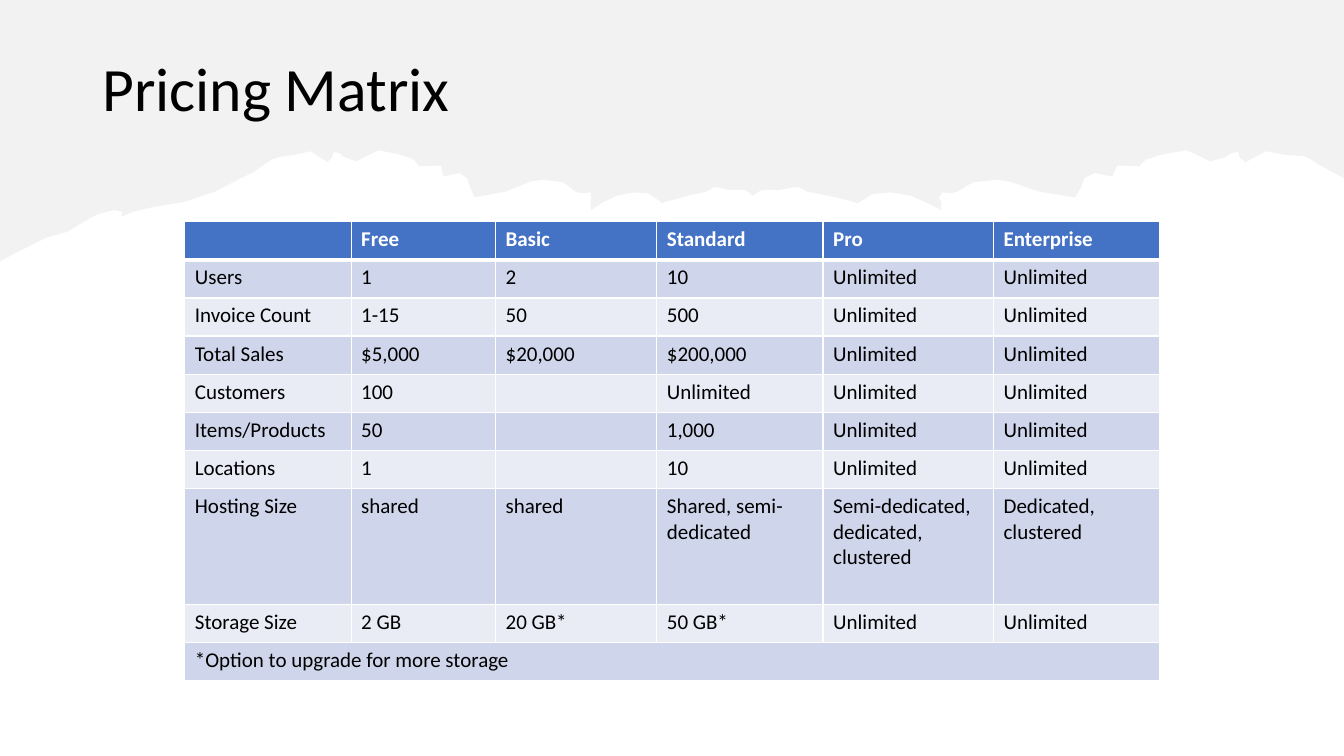
from lxml import etree
from pptx import Presentation
from pptx.dml.color import RGBColor
from pptx.enum.text import MSO_ANCHOR
from pptx.oxml.ns import qn
from pptx.util import Inches, Pt

MIDDLE = MSO_ANCHOR.MIDDLE
COLORS = {
    "black": "000000",
    "white": "FFFFFF",
    "header": "4472C4",
    "band": "CFD5EA",
    "light": "E9EBF5",
    "torn": "E7E6E6",
}
GRID_COLS, GRID_ROWS = 160, 90

# Torn lower edge of the backdrop, left to right, in grid units
TORN_EDGE = [
    (0, 31.1), (2.3, 29.9), (5.5, 28.3), (8, 27.6), (9.8, 26.5), (11.6, 25.5),
    (13.6, 25), (14.6, 25.2), (14.4, 25.8), (16.2, 25.1), (18, 24.7), (22, 24),
    (25.6, 22.8), (28.7, 21.2), (30.2, 20.5), (31.3, 19.7), (32.3, 19),
    (33.7, 18.6), (35.2, 18.4), (37, 18), (39, 19.3), (39.5, 18.8),
    (39.7, 18.1), (40.4, 18.2), (41, 18.7), (42.4, 19.2), (44.4, 18.2),
    (45.1, 17.9), (46.7, 18.2), (47.9, 18.5), (49.3, 19), (49.9, 19.8),
    (52.5, 19.7), (52.8, 21), (54.7, 20.6), (55.6, 21.2), (56, 22.3),
    (56.5, 23.5), (60.2, 22.8), (63.2, 21.6), (64.6, 21.4), (67.1, 21.7),
    (68.5, 22.8), (69.2, 23), (70.3, 22.9), (70.4, 23.5), (70.3, 24.3),
    (70.4, 25), (71.6, 24.2), (73.4, 23.3), (75.5, 22.9), (77.2, 23),
    (78.5, 23.9), (78.8, 24.2), (79.7, 23.9), (82.3, 23.2), (84.1, 22.8),
    (85, 22.3), (85.6, 22.3), (86.7, 22.6), (88.3, 22.6), (88.9, 22.7),
    (89.6, 23.3), (90.5, 22.7), (91.2, 22.6), (92.9, 22.6), (94.4, 22.3),
    (95.2, 22.3), (96.1, 22.8), (98.2, 23.2), (101.2, 23.9), (102.1, 24.2),
    (102.6, 23.9), (103.8, 23.1), (106.1, 22.9), (108.4, 23.3), (110.5, 24.2),
    (112, 25), (112.1, 24.2), (111.8, 23.5), (112.2, 22.9), (113.3, 23),
    (114, 22.8), (115.8, 21.7), (118.7, 21.4), (120.2, 21.6), (123.7, 22.8),
    (128, 23.5), (128.7, 22.3), (129.1, 21.2), (130.3, 20.6), (132.4, 21),
    (133, 19.7), (135.6, 19.8), (136.4, 19), (138, 18.5), (139.4, 18.2),
    (141.2, 17.9), (142, 18.2), (144.1, 19.2), (145.9, 18.7), (146.6, 18.2),
    (147.4, 18.1), (147.6, 18.8), (148.3, 19.3), (150.7, 18), (152.8, 18.4),
    (155.3, 18.6), (156.1, 19), (157.2, 19.7), (159.4, 20.9), (160, 21.2),
]

U = "Unlimited"
PRICING = [
    ["", "Free", "Basic", "Standard", "Pro", "Enterprise"],
    ["Users", "1", "2", "10", U, U],
    ["Invoice Count", "1-15", "50", "500", U, U],
    ["Total Sales", "$5,000", "$20,000", "$200,000", U, U],
    ["Customers", "100", "", U, U, U],
    ["Items/Products", "50", "", "1,000", U, U],
    ["Locations", "1", "", "10", U, U],
    ["Hosting Size", "shared", "shared", "Shared, semi-dedicated",
     "Semi-dedicated, dedicated, clustered", "Dedicated, clustered"],
    ["Storage Size", "2 GB", "20 GB*", "50 GB*", U, U],
    ["*Option to upgrade for more storage", "", "", "", "", ""],
]
COL_WIDTHS = [19.8, 17.2, 19.2, 19.8, 20.3, 19.8]
ROW_HEIGHTS = [4.54] * 7 + [13.8] + [4.54] * 2


def rgb(name):
    return RGBColor.from_string(COLORS[name])


class SlideBuilder:
    font = "Calibri"
    cell_size = 15

    def __init__(self, prs):
        self.slide = prs.slides.add_slide(prs.slide_layouts[6])
        self.col = prs.slide_width / GRID_COLS
        self.row = prs.slide_height / GRID_ROWS

    def x(self, cols):
        return round(cols * self.col)

    def y(self, rows):
        return round(rows * self.row)

    def box(self, left, top, width, height):
        return self.x(left), self.y(top), self.x(width), self.y(height)

    def style(self, p, size, color, bold=False):
        p.font.name, p.font.size, p.font.bold = self.font, Pt(size), bold
        p.font.color.rgb = rgb(color)

    def outline(self, points, color, opacity):
        (x0, y0), *rest = [(self.x(x), self.y(y)) for x, y in points]
        builder = self.slide.shapes.build_freeform(x0, y0)
        builder.add_line_segments(rest, close=True)
        sp = builder.convert_to_shape()
        sp.shadow.inherit = False
        sp.line.fill.background()
        sp.fill.solid()
        sp.fill.fore_color.rgb = rgb(color)
        clr = sp.element.spPr.find(qn("a:solidFill"))[0]
        etree.SubElement(clr, qn("a:alpha"), val=str(opacity * 1000))

    def title(self, text, *place):
        tf = self.slide.shapes.add_textbox(*self.box(*place)).text_frame
        tf.word_wrap = True
        tf.vertical_anchor = MIDDLE
        p = tf.paragraphs[0]
        p.text = text
        p.line_spacing = 0.9
        self.style(p, 44, "black")

    def borders(self, cell, bottom):
        tc_pr = cell._tc.get_or_add_tcPr()
        for side, width in (("L", 1), ("R", 1), ("T", 1), ("B", bottom)):
            ln = etree.SubElement(tc_pr, qn(f"a:ln{side}"), w=str(Pt(width)))
            fill = etree.SubElement(ln, qn("a:solidFill"))
            etree.SubElement(fill, qn("a:srgbClr"), val=COLORS["white"])

    def cell(self, cell, text, row):
        header = row == 0
        self.borders(cell, 3 if header else 1)
        cell.fill.solid()
        band = "band" if row % 2 else "light"
        cell.fill.fore_color.rgb = rgb("header" if header else band)
        p = cell.text_frame.paragraphs[0]
        p.text = text
        self.style(p, self.cell_size, "white" if header else "black", header)
        if not text:
            # An empty cell takes its line height from the end mark
            etree.SubElement(p._p, qn("a:endParaRPr"), sz=str(self.cell_size * 100))

    def table(self, rows, left, top, widths, heights):
        place = self.box(left, top, sum(widths), sum(heights))
        table = self.slide.shapes.add_table(len(heights), len(widths), *place).table
        table.first_row = table.horz_banding = False
        for column, width in zip(table.columns, widths):
            column.width = self.x(width)
        for i, (row, height) in enumerate(zip(rows, heights)):
            table.rows[i].height = self.y(height)
            for j, text in enumerate(row):
                self.cell(table.cell(i, j), text, i)
        last = len(heights) - 1
        table.cell(last, 0).merge(table.cell(last, len(widths) - 1))


def main():
    prs = Presentation()
    prs.slide_width, prs.slide_height = Inches(13.33), Inches(7.5)
    s = SlideBuilder(prs)
    s.outline(TORN_EDGE + [(GRID_COLS, 0), (0, 0)], "torn", 50)
    s.title("Pricing Matrix", 11, 4.8, 138, 12.2)
    s.table(PRICING, 22, 26.4, COL_WIDTHS, ROW_HEIGHTS)
    prs.save("out.pptx")


if __name__ == "__main__":
    main()
